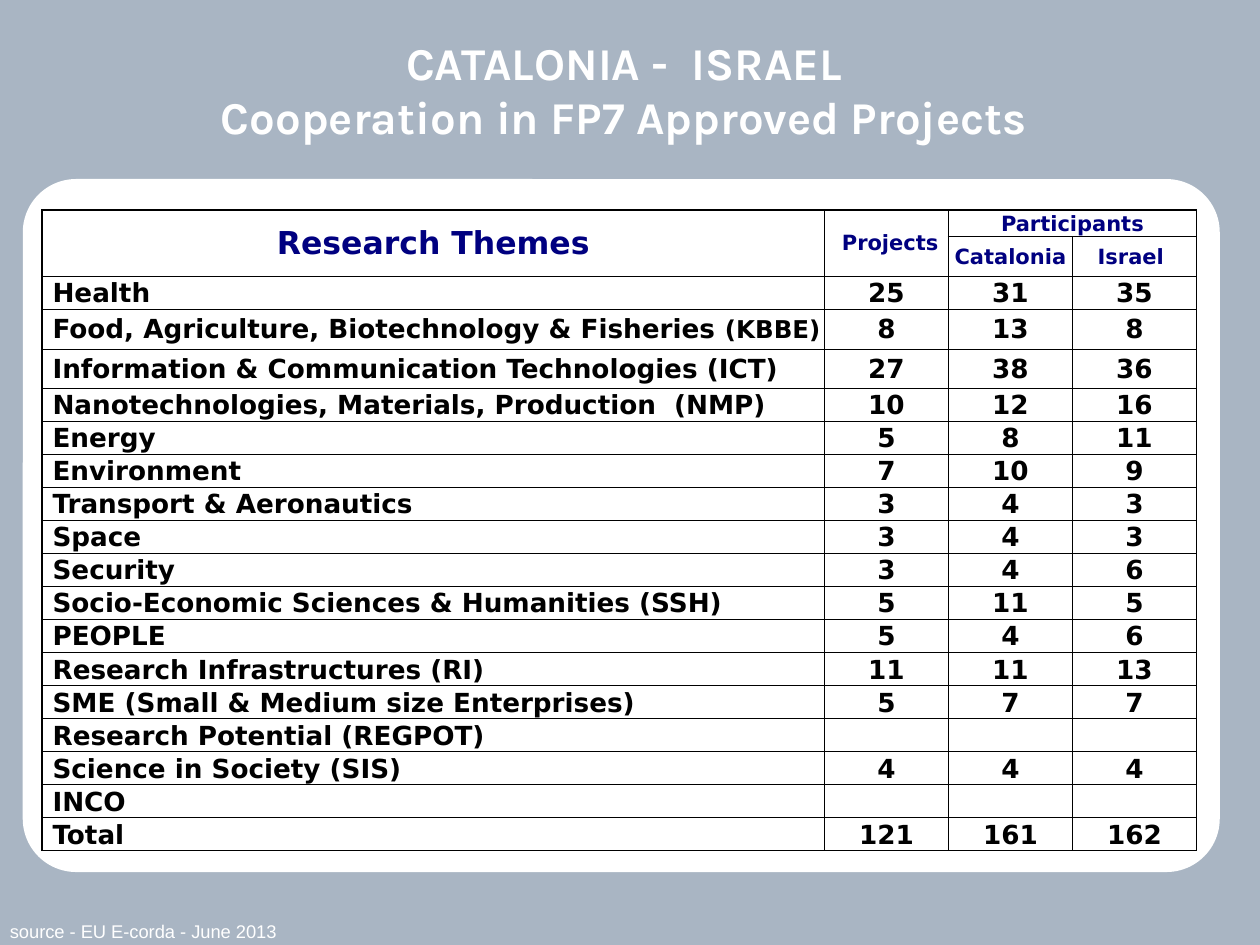
from dataclasses import dataclass

from lxml.etree import SubElement
from pptx import Presentation
from pptx.dml.color import RGBColor as Rgb
from pptx.enum.shapes import MSO_SHAPE as Shape
from pptx.enum.text import MSO_ANCHOR as Anchor, PP_ALIGN as Align
from pptx.oxml.ns import qn
from pptx.util import Cm, Pt

TITLE = ["CATALONIA -  ISRAEL", "Cooperation in FP7 Approved Projects"]
SOURCE = "source - EU E-corda - June 2013"
HEADER = [
    ["Research Themes", "Projects", "Participants", ""],
    ["", "", "Catalonia", "Israel"],
]
MERGES = [((0, 0), (1, 0)), ((0, 1), (1, 1)), ((0, 2), (0, 3))]
THEMES = [
    ("Health", 25, 31, 35),
    ("Food, Agriculture, Biotechnology & Fisheries (KBBE)", 8, 13, 8),
    ("Information & Communication Technologies (ICT)", 27, 38, 36),
    ("Nanotechnologies, Materials, Production  (NMP)", 10, 12, 16),
    ("Energy", 5, 8, 11),
    ("Environment", 7, 10, 9),
    ("Transport & Aeronautics", 3, 4, 3),
    ("Space", 3, 4, 3),
    ("Security", 3, 4, 6),
    ("Socio-Economic Sciences & Humanities (SSH)", 5, 11, 5),
    ("PEOPLE", 5, 4, 6),
    ("Research Infrastructures (RI)", 11, 11, 13),
    ("SME (Small & Medium size Enterprises)", 5, 7, 7),
    ("Research Potential (REGPOT)", "", "", ""),
    ("Science in Society (SIS)", 4, 4, 4),
    ("INCO", "", "", ""),
    ("Total", 121, 161, 162),
]
COLUMN_WIDTHS = [15.77, 2.5, 2.5, 2.5]
HEADER_HEIGHTS = [0.53, 0.79]
BODY_HEIGHT = 0.657
TALL_HEIGHTS = {3: 0.81, 4: 0.79}
SIDE_MARGINS = {"Projects": (0.18, 0.03), "Israel": (0.03, 0.18)}


@dataclass(frozen=True)
class Theme:
    veil: str = "17375E"
    white: str = "FFFFFF"
    black: str = "000000"
    navy: str = "000080"
    title_font: str = "Karla"
    table_font: str = "DejaVu Sans"
    source_font: str = "Arial"
    title: float = 26
    source: float = 10.5
    heading: float = 18
    label: float = 12
    body: float = 15
    acronym: float = 14
    thick: float = 1
    thin: float = 0.5


theme = Theme()


def add_span(para, text, font, size, color, bold=True):
    span = para.add_run()
    span.text = text
    span.font.name = font
    span.font.size = Pt(size)
    span.font.bold = bold
    span.font.color.rgb = Rgb.from_string(color)


def add_panel(page, kind, place, color):
    panel = page.shapes.add_shape(kind, *map(Cm, place))
    panel.shadow.inherit = False
    panel.line.fill.background()
    panel.fill.solid()
    panel.fill.fore_color.rgb = Rgb.from_string(color)
    return panel


def add_lines(page, place, lines, align, *style):
    box = page.shapes.add_textbox(*map(Cm, place))
    frame = box.text_frame
    frame.word_wrap = True
    frame.vertical_anchor = Anchor.MIDDLE
    for index, line in enumerate(lines):
        para = frame.add_paragraph() if index else frame.paragraphs[0]
        para.alignment = align
        add_span(para, line, *style)


def set_borders(cell, row, column):
    cell.fill.background()
    properties = cell._tc.get_or_add_tcPr()
    header = row < len(HEADER)
    thick_sides = {
        "L": header or column == 0,
        "R": header or column == len(COLUMN_WIDTHS) - 1,
        "T": row == 0,
        "B": False,
    }
    for index, (side, thick) in enumerate(thick_sides.items()):
        width = Pt(theme.thick if thick else theme.thin)
        line = SubElement(properties, qn(f"a:ln{side}"), w=str(int(width)))
        fill = SubElement(line, qn("a:solidFill"))
        SubElement(fill, qn("a:srgbClr"), val=theme.black)
        properties.insert(index, line)


def fill_cell(cell, text, row, column):
    header = row < len(HEADER)
    theme_name = column == 0 and not header
    left, right = SIDE_MARGINS.get(text, (0.21 if theme_name else 0.03, 0.03))
    cell.margin_left, cell.margin_right = Cm(left), Cm(right)
    cell.margin_top, cell.margin_bottom = Cm(0.03), 0
    cell.vertical_anchor = Anchor.MIDDLE
    para = cell.text_frame.paragraphs[0]
    para.alignment = Align.LEFT if theme_name else Align.CENTER
    size = theme.body
    if header:
        size = theme.label if column else theme.heading
    color = theme.navy if header else theme.black
    main, acronym, rest = text.partition("(KBBE)")
    if main:
        add_span(para, main, theme.table_font, size, color)
    else:
        SubElement(para._p, qn("a:endParaRPr"), sz=str(theme.label * 100))
    if acronym:
        add_span(para, acronym, theme.table_font, theme.acronym, color)
    set_borders(cell, row, column)


def add_theme_table(page):
    rows = HEADER + THEMES
    heights = HEADER_HEIGHTS + [
        TALL_HEIGHTS.get(row, BODY_HEIGHT) for row in range(len(HEADER), len(rows))
    ]
    place = (0.85, 4.23, sum(COLUMN_WIDTHS), sum(heights))
    table = page.shapes.add_table(
        len(rows), len(COLUMN_WIDTHS), *map(Cm, place)
    ).table
    table.first_row = table.horz_banding = False
    for column, width in zip(table.columns, COLUMN_WIDTHS):
        column.width = Cm(width)
    for row, values in enumerate(rows):
        table.rows[row].height = Cm(heights[row])
        for column, value in enumerate(values):
            fill_cell(table.cell(row, column), str(value), row, column)
    for first, last in MERGES:
        table.cell(*first).merge(table.cell(*last))


def main():
    """Build the slide on Catalonia and Israel in FP7 projects."""
    deck = Presentation()
    deck.slide_width, deck.slide_height = Cm(25.4), Cm(19.05)
    page = deck.slides.add_slide(deck.slide_layouts[6])
    veil = add_panel(page, Shape.RECTANGLE, (-0.08, 0, 25.48, 19.05), theme.veil)
    tint = veil.fill._xPr.find(qn("a:solidFill"))[0]
    SubElement(tint, qn("a:alpha"), val="37000")
    card = add_panel(
        page, Shape.ROUNDED_RECTANGLE, (0.46, 3.61, 24.13, 13.97), theme.white
    )
    card.adjustments[0] = 0.077
    add_lines(page, (-0.05, 18.42, 9.19, 0.71), [SOURCE], Align.LEFT,
              theme.source_font, theme.source, theme.white, False)
    add_lines(page, (2.74, 0.2, 19.69, 3.2), TITLE, Align.CENTER,
              theme.title_font, theme.title, theme.white)
    add_theme_table(page)
    deck.save("out.pptx")


if __name__ == "__main__":
    main()
